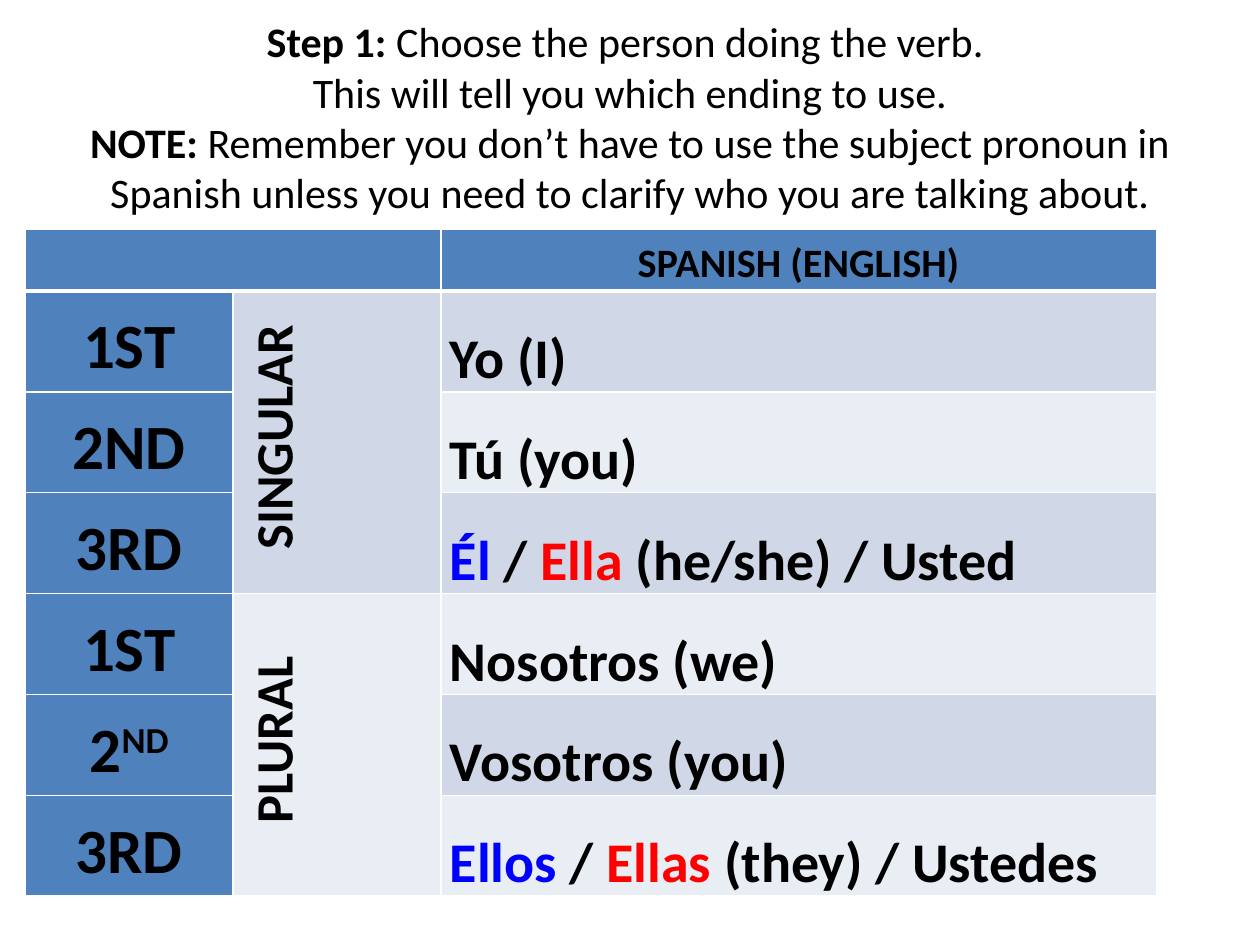
from lxml.etree import SubElement
from pptx import Presentation
from pptx.dml.color import RGBColor
from pptx.enum.text import MSO_ANCHOR as Anchor, PP_ALIGN as Align
from pptx.oxml.ns import qn
from pptx.util import Inches, Pt

COLORS = {"black": "000000", "white": "FFFFFF", "blue": "0000FF", "red": "FF0000",
          "header": "4F81BD", "dark": "D0D8E8", "light": "E9EDF4"}
TITLE = [
    ("Step 1:", {"bold": True}),
    (" Choose the person doing the verb. \vThis will tell you which ending to use.\v", {}),
    ("NOTE: ", {"bold": True}),
    ("Remember you don’t have to use the subject pronoun in Spanish "
     "unless you need to clarify who you are talking about.", {}),
]
HEADING = "SPANISH (ENGLISH)"
NUMBERS = [("SINGULAR", "dark"), ("PLURAL", "light")]
PERSONS = [
    ([("1ST", {})], [("Yo (I)", {})]),
    ([("2ND", {})], [("Tú (you)", {})]),
    ([("3RD", {})], [("Él", {"color": "blue"}), (" / ", {}), ("Ella", {"color": "red"}),
                     (" (he/she) / Usted", {})]),
    ([("1ST", {})], [("Nosotros (we)", {})]),
    ([("2", {}), ("ND", {"raised": True})], [("Vosotros (you)", {})]),
    ([("3RD", {})], [("Ellos ", {"color": "blue"}), ("/ ", {}), ("Ellas", {"color": "red"}),
                     (" (they) / Ustedes", {})]),
]
COLUMN_WIDTHS = [1.65, 1.65, 5.68]
HEADER_HEIGHT, ROW_HEIGHT = 0.49, 0.8


def add_text(para, text, size=24, bold=False, color="black", raised=False):
    """Append formatted text to a paragraph, turning vertical tabs into line breaks."""
    for index, line in enumerate(text.split("\v")):
        if index:
            para.add_line_break()
        if not line:
            continue
        span = para.add_run()
        span.text = line
        font = span.font
        font.name, font.size, font.bold = "Calibri", Pt(size), bold
        font.color.rgb = RGBColor.from_string(COLORS[color])
        if raised:
            span._r.get_or_add_rPr().set("baseline", "30000")


def style_cell(cell, fill, bottom=1):
    """Give a table cell its borders, fill and margins."""
    props = cell._tc.get_or_add_tcPr()
    for side, width in (("L", 1), ("R", 1), ("T", 1), ("B", bottom)):
        line = SubElement(props, qn(f"a:ln{side}"), w=str(Pt(width)))
        SubElement(SubElement(line, qn("a:solidFill")), qn("a:srgbClr"), val=COLORS["white"])
    cell.fill.solid()
    cell.fill.fore_color.rgb = RGBColor.from_string(COLORS[fill])
    cell.margin_left = cell.margin_right = Inches(0.07)
    cell.margin_top = cell.margin_bottom = 0


def write_cell(cell, spans, size, align=Align.CENTER, anchor=Anchor.MIDDLE, spacing=1.15):
    """Fill a table cell with bold text and return its paragraph."""
    cell.vertical_anchor = anchor
    para = cell.text_frame.paragraphs[0]
    para.alignment, para.line_spacing = align, spacing
    for text, style in spans:
        add_text(para, text, size=size, bold=True, **style)
    return para


def add_title(page):
    """Add the centred instructions."""
    box = page.shapes.add_textbox(Inches(0.5), Inches(0.3), Inches(9), Inches(1.25))
    frame = box.text_frame
    frame.word_wrap, frame.vertical_anchor = True, Anchor.MIDDLE
    para = frame.paragraphs[0]
    para.alignment = Align.CENTER
    for text, style in TITLE:
        add_text(para, text, **style)


def add_pronouns(page):
    """Add the table of subject pronouns."""
    height = HEADER_HEIGHT + ROW_HEIGHT * len(PERSONS)
    table = page.shapes.add_table(len(PERSONS) + 1, 3, Inches(0.2), Inches(1.82),
                                  Inches(sum(COLUMN_WIDTHS)), Inches(height)).table
    for column, width in zip(table.columns, COLUMN_WIDTHS):
        column.width = Inches(width)
    for index, row in enumerate(table.rows):
        row.height = Inches(ROW_HEIGHT if index else HEADER_HEIGHT)

    for column in range(3):
        style_cell(table.cell(0, column), "header", bottom=3)
    table.cell(0, 0).merge(table.cell(0, 1))
    write_cell(table.cell(0, 2), [(HEADING, {})], 23)

    group = len(PERSONS) // len(NUMBERS)
    for row, (person, pronoun) in enumerate(PERSONS, 1):
        fills = "header", NUMBERS[(row - 1) // group][1], "dark" if row % 2 else "light"
        for column, fill in enumerate(fills):
            style_cell(table.cell(row, column), fill)
        write_cell(table.cell(row, 0), person, 36)
        write_cell(table.cell(row, 2), pronoun, 32, Align.LEFT, Anchor.TOP, 1.5)

    for index, (number, _) in enumerate(NUMBERS):
        first = 1 + index * group
        cell = table.cell(first, 1)
        cell.merge(table.cell(first + group - 1, 1))
        para = write_cell(cell, [(number, {})], 30)
        para._p.get_or_add_pPr().set("marL", str(Inches(0.08)))
        cell._tc.get_or_add_tcPr().set("vert", "vert270")


def main():
    """Build and save the slide."""
    deck = Presentation()
    deck.slide_width, deck.slide_height = Inches(10), Inches(7.5)
    page = deck.slides.add_slide(deck.slide_layouts[6])
    add_title(page)
    add_pronouns(page)
    deck.save("out.pptx")


if __name__ == "__main__":
    main()
